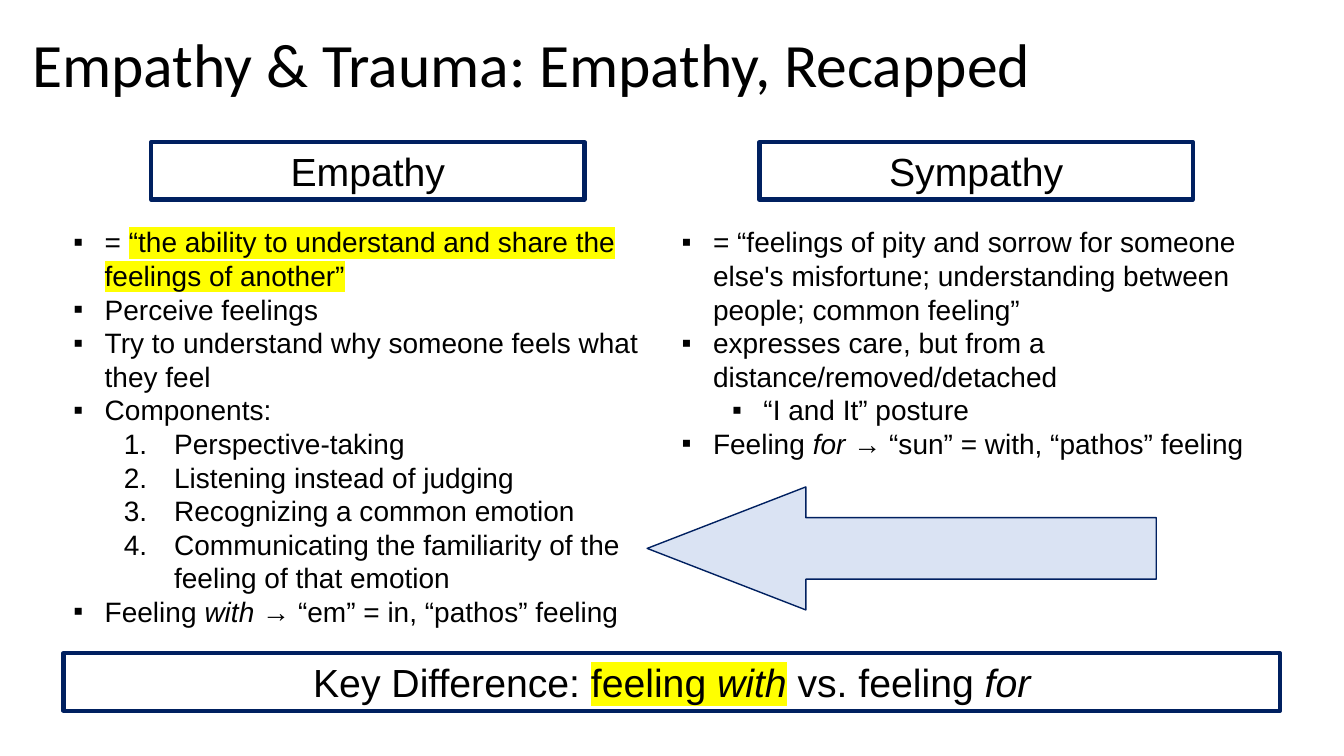
from lxml.etree import SubElement
from pptx import Presentation
from pptx.dml.color import RGBColor
from pptx.enum.shapes import MSO_SHAPE
from pptx.enum.text import MSO_ANCHOR, MSO_AUTO_SIZE, PP_ALIGN
from pptx.oxml.ns import qn
from pptx.util import Cm, Pt

# Bullet kinds: level, left margin and hanging indent in cm
BULLETS = {
    "item": (0, 0.79, 0.79),
    "subitem": (1, 2.06, 0.79),
    "number": (1, 2.54, 1.27),
}


def rgb(value):
    return RGBColor.from_string(value)


def add_run(p, text, size=20, font="Arial", color="000000", italic=False, mark=None):
    r = p.add_run()
    r.text = text
    r.font.size = Pt(size)
    r.font.name = font
    r.font.color.rgb = rgb(color)
    if italic:
        r.font.italic = True
    if mark:
        highlight = SubElement(r.font._element, qn("a:highlight"))
        SubElement(highlight, qn("a:srgbClr"), val=mark)
        r.font._element.find(qn("a:solidFill")).addnext(highlight)
    return r


def set_bullet(p, kind):
    level, margin, hang = BULLETS[kind]
    p.level = level
    pPr = p._p.get_or_add_pPr()
    pPr.set("marL", str(Cm(margin)))
    pPr.set("indent", str(-Cm(hang)))
    SubElement(pPr, qn("a:buFont"), typeface="Arial")
    if kind == "number":
        SubElement(pPr, qn("a:buAutoNum"), type="arabicPeriod")
    else:
        SubElement(pPr, qn("a:buChar"), char="▪")


class Slide:
    navy, pale, white, yellow = "002060", "DAE3F3", "FFFFFF", "FFFF00"

    def __init__(self, prs):
        self.s = prs.slides.add_slide(prs.slide_layouts[6])

    def shape(self, kind, x, y, w, h, fill=None, line=None, width=1):
        sp = self.s.shapes.add_shape(kind, Cm(x), Cm(y), Cm(w), Cm(h))
        sp.shadow.inherit = False
        if fill:
            sp.fill.solid()
            sp.fill.fore_color.rgb = rgb(fill)
        else:
            sp.fill.background()
        if line:
            sp.line.color.rgb = rgb(line)
            sp.line.width = Pt(width)
        else:
            sp.line.fill.background()
        return sp

    def runs(self, p, parts, **style):
        """Add (text, flags) parts to p; flag i is italic, h is highlighted."""
        for text, flags in parts:
            add_run(p, text, italic="i" in flags,
                    mark=self.yellow if "h" in flags else None, **style)

    def title(self, text, x, y, w, h):
        sp = self.shape(MSO_SHAPE.RECTANGLE, x, y, w, h, fill=self.white)
        tf = sp.text_frame
        tf.word_wrap = True
        tf.vertical_anchor = MSO_ANCHOR.MIDDLE
        p = tf.paragraphs[0]
        p.alignment = PP_ALIGN.LEFT
        p.line_spacing = 0.9
        add_run(p, text, size=44, font="Calibri")

    def framed(self, parts, x, y, w, h=1.45):
        sp = self.shape(MSO_SHAPE.RECTANGLE, x, y, w, h, line=self.navy, width=3)
        tf = sp.text_frame
        tf.word_wrap = True
        tf.auto_size = MSO_AUTO_SIZE.SHAPE_TO_FIT_TEXT
        tf.vertical_anchor = MSO_ANCHOR.TOP
        p = tf.paragraphs[0]
        p.alignment = PP_ALIGN.CENTER
        self.runs(p, parts, size=28)

    def bullets(self, items, x, y, w, h):
        tf = self.s.shapes.add_textbox(Cm(x), Cm(y), Cm(w), Cm(h)).text_frame
        tf.word_wrap = True
        tf.auto_size = MSO_AUTO_SIZE.SHAPE_TO_FIT_TEXT
        for i, (kind, *parts) in enumerate(items):
            p = tf.add_paragraph() if i else tf.paragraphs[0]
            set_bullet(p, kind)
            self.runs(p, parts)

    def left_arrow(self, x, y, w, h):
        sp = self.shape(MSO_SHAPE.LEFT_ARROW, x, y, w, h, fill=self.pale, line=self.navy)
        sp.adjustments[0] = 0.5
        sp.adjustments[1] = 1.29


EMPATHY = [
    ("item", ("= ", ""),
     ("“the ability to understand and share the feelings of another”", "h")),
    ("item", ("Perceive feelings", "")),
    ("item", ("Try to understand why someone feels what they feel", "")),
    ("item", ("Components:", "")),
    ("number", ("Perspective-taking", "")),
    ("number", ("Listening instead of judging", "")),
    ("number", ("Recognizing a common emotion", "")),
    ("number", ("Communicating the familiarity of the feeling of that emotion", "")),
    ("item", ("Feeling ", ""), ("with ", "i"), ("→ “em” = in, “pathos” feeling", "")),
]
SYMPATHY = [
    ("item", ("= “feelings of pity and sorrow for someone else's misfortune; "
              "understanding between people; common feeling”", "")),
    ("item", ("expresses care, but from a distance/removed/detached", "")),
    ("subitem", ("“I and It” posture", "")),
    ("item", ("Feeling ", ""), ("for ", "i"), ("→ “sun” = with, “pathos” feeling", "")),
]
KEY_DIFFERENCE = [
    ("Key Difference: ", ""), ("feeling ", "h"), ("with", "hi"), (" ", "i"),
    ("vs. feeling ", ""), ("for", "i"),
]


def main():
    prs = Presentation()
    prs.slide_width, prs.slide_height = Cm(33.87), Cm(19.05)
    slide = Slide(prs)
    left, column = 1.6, 15.33
    columns = [("Empathy", EMPATHY, 10.44), ("Sympathy", SYMPATHY, 6.25)]
    for i, (heading, items, height) in enumerate(columns):
        x = left + i * column
        slide.framed([(heading, "")], x + 2.21, 3.58, 10.92)
        slide.bullets(items, x, 5.54, column, height)
    slide.framed(KEY_DIFFERENCE, left, 16.46, 2 * column)
    slide.title("Empathy & Trauma: Empathy, Recapped", 0.56, 0.46, 29.21, 2.51)
    slide.left_arrow(16.31, 12.27, 12.83, 3.1)
    prs.save("out.pptx")


if __name__ == "__main__":
    main()
